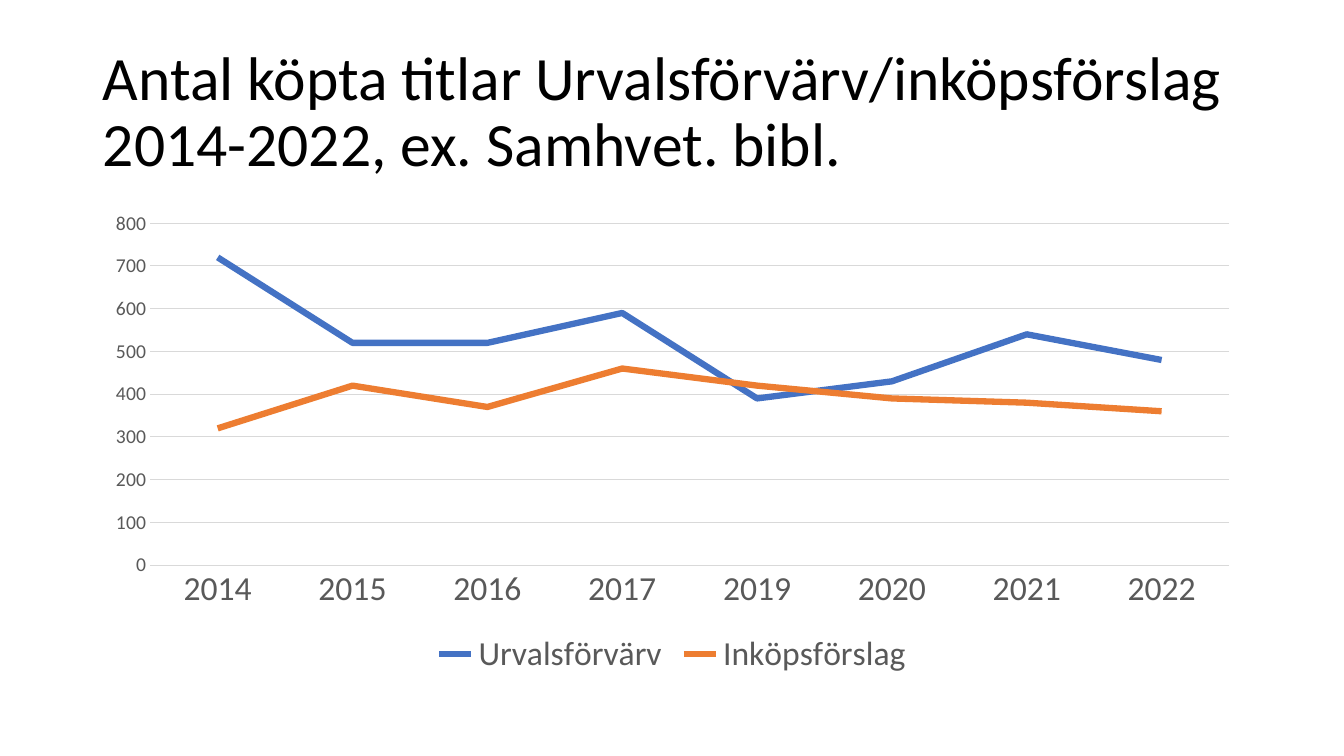
import pptx
import pptx.util
import pptx.chart.data
import pptx.dml.color
import pptx.enum.chart
import pptx.enum.text

Inches = pptx.util.Inches
Pt = pptx.util.Pt
enum = pptx.enum.chart

COLORS = {
    "title": "000000",
    "label": "595959",
    "grid": "D9D9D9",
    "Urvalsförvärv": "4472C4",
    "Inköpsförslag": "ED7D31",
}
YEARS = ["2014", "2015", "2016", "2017", "2019", "2020", "2021", "2022"]
TITLES = {
    "Urvalsförvärv": [720, 520, 520, 590, 390, 430, 540, 480],
    "Inköpsförslag": [320, 420, 370, 460, 420, 390, 380, 360],
}


def style(font, size, color):
    font.name = "Calibri"
    font.size = Pt(size)
    font.bold = False
    font.color.rgb = pptx.dml.color.RGBColor.from_string(COLORS[color])


def stroke(line, width, color):
    line.color.rgb = pptx.dml.color.RGBColor.from_string(COLORS[color])
    line.width = Pt(width)


deck = pptx.Presentation()
deck.slide_width = Inches(13.33)
deck.slide_height = Inches(7.5)
slide = deck.slides.add_slide(deck.slide_layouts[5])

# Title
title = slide.shapes.title
place = {"left": 0.92, "top": 0.4, "width": 11.5, "height": 1.45}
for name, value in place.items():
    setattr(title, name, Inches(value))
frame = title.text_frame
frame.text = "Antal köpta titlar Urvalsförvärv/inköpsförslag 2014-2022, ex. Samhvet. bibl."
frame.word_wrap = True
frame.auto_size = pptx.enum.text.MSO_AUTO_SIZE.NONE
frame.vertical_anchor = pptx.enum.text.MSO_ANCHOR.MIDDLE
para = frame.paragraphs[0]
para.alignment = pptx.enum.text.PP_ALIGN.LEFT
para.line_spacing = 0.9
style(para.runs[0].font, 44, "title")

# Line chart
data = pptx.chart.data.CategoryChartData()
data.categories = YEARS
for name, counts in TITLES.items():
    data.add_series(name, counts)
chart = slide.shapes.add_chart(
    enum.XL_CHART_TYPE.LINE,
    Inches(0.92), Inches(2), Inches(11.5), Inches(4.76), data,
).chart
chart.has_title = False
style(chart.font, 10, "title")
chart.plots[0].vary_by_categories = False
for series in chart.plots[0].series:
    series.smooth = False
    series.marker.style = enum.XL_MARKER_STYLE.NONE
    stroke(series.format.line, 4.5, series.name)

# Axes
for axis, size in ((chart.category_axis, 24), (chart.value_axis, 14)):
    axis.major_tick_mark = enum.XL_TICK_MARK.NONE
    axis.minor_tick_mark = enum.XL_TICK_MARK.NONE
    style(axis.tick_labels.font, size, "label")
stroke(chart.category_axis.format.line, 0.75, "grid")
scale = {"minimum_scale": 0, "maximum_scale": 800, "major_unit": 100,
         "has_major_gridlines": True}
for name, value in scale.items():
    setattr(chart.value_axis, name, value)
chart.value_axis.format.line.fill.background()
stroke(chart.value_axis.major_gridlines.format.line, 0.75, "grid")

# Legend
chart.has_legend = True
chart.legend.position = enum.XL_LEGEND_POSITION.BOTTOM
chart.legend.include_in_layout = False
style(chart.legend.font, 24, "label")

deck.save("out.pptx")
